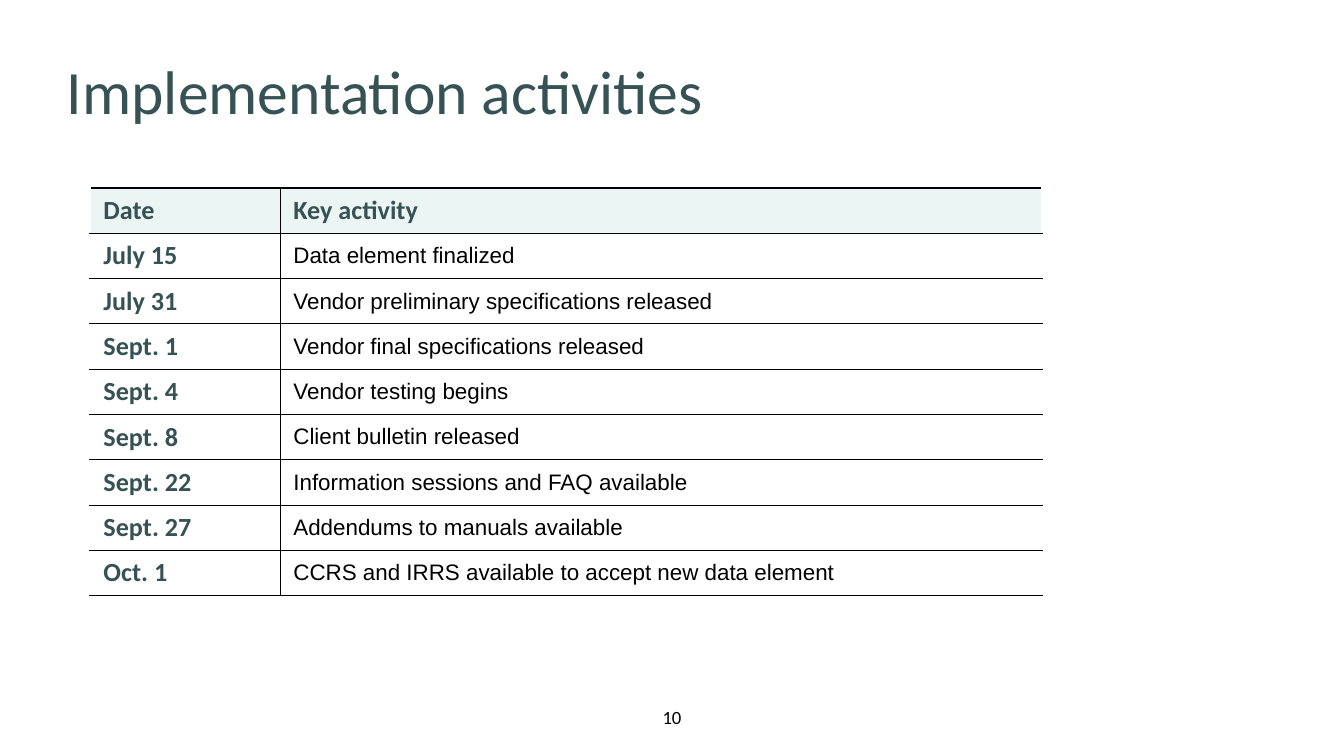
from lxml import etree
from pptx import Presentation
from pptx import util as u
from pptx.dml.color import RGBColor
from pptx.enum import text
from pptx.oxml import ns

SCALE = 914400 / 134.4
HEX = {"ink": "365254", "black": "000000", "white": "FFFFFF", "mint": "EBF5F3"}
ROWS = [
    ("Date", "Key activity"),
    ("July 15", "Data element finalized"),
    ("July 31", "Vendor preliminary specifications released"),
    ("Sept. 1", "Vendor final specifications released"),
    ("Sept. 4", "Vendor testing begins"),
    ("Sept. 8", "Client bulletin released"),
    ("Sept. 22", "Information sessions and FAQ available"),
    ("Sept. 27", "Addendums to manuals available"),
    ("Oct. 1", "CCRS and IRRS available to accept new data element"),
]


def px(n):
    return u.Emu(round(n * SCALE))


def place(shape, left, top, width, height):
    shape.left, shape.top = px(left), px(top)
    shape.width, shape.height = px(width), px(height)


def write(para, words, size, color, face="Calibri", bold=False):
    run = para.add_run()
    run.text = words
    run.font.name = face
    run.font.size = u.Pt(size)
    run.font.bold = bold
    run.font.color.rgb = RGBColor.from_string(HEX[color])


def trim(frame, anchor):
    frame.margin_left = frame.margin_right = 0
    frame.margin_top = frame.margin_bottom = 0
    frame.word_wrap = True
    frame.auto_size = text.MSO_AUTO_SIZE.NONE
    frame.vertical_anchor = anchor


def add_title(slide, words):
    title = slide.shapes.title
    place(title, 67, 65, 1210, 63)
    trim(title.text_frame, text.MSO_ANCHOR.TOP)
    para = title.text_frame.paragraphs[0]
    para.alignment = text.PP_ALIGN.LEFT
    para.line_spacing = u.Pt(33)
    write(para, words, 33, "ink")


def add_page(slide, words):
    box = slide.shapes.add_textbox(px(630), px(706), px(84), px(23))
    trim(box.text_frame, text.MSO_ANCHOR.MIDDLE)
    para = box.text_frame.paragraphs[0]
    para.alignment = text.PP_ALIGN.CENTER
    write(para, words, 10, "black")


def add_edge(cell, side, color, width):
    props = cell._tc.get_or_add_tcPr()
    line = etree.SubElement(props, ns.qn(f"a:ln{side}"), w=str(u.Pt(width)))
    fill = etree.SubElement(line, ns.qn("a:solidFill"))
    etree.SubElement(fill, ns.qn("a:srgbClr"), val=HEX[color])


def style(cell, row, col):
    outer, inner = ("white", 1), ("black", 0.5)
    edges = {
        "L": inner if col else outer,
        "R": outer if col else inner,
        "T": ("black", 0.5 if row else 1),
        "B": ("black", 1 if row == len(ROWS) - 1 else 0.5),
    }
    for side, edge in edges.items():
        add_edge(cell, side, *edge)
    if row:
        cell.fill.background()
    else:
        cell.fill.solid()
        cell.fill.fore_color.rgb = RGBColor.from_string(HEX["mint"])


def add_grid(slide):
    widths, high = (190, 762), 45
    frame = slide.shapes.add_table(
        len(ROWS), len(widths), px(90), px(188), px(sum(widths)), px(high * len(ROWS))
    )
    table = frame.table
    table.first_row = table.horz_banding = False
    for col, wide in enumerate(widths):
        table.columns[col].width = px(wide)
    for row, items in enumerate(ROWS):
        table.rows[row].height = px(high)
        for col, words in enumerate(items):
            cell = table.cell(row, col)
            style(cell, row, col)
            para = cell.text_frame.paragraphs[0]
            if row and col:
                cell.vertical_anchor = text.MSO_ANCHOR.MIDDLE
                write(para, words, 12, "black", "Arial")
            else:
                write(para, words, 14, "ink", bold=True)


def main():
    deck = Presentation()
    deck.slide_width, deck.slide_height = px(1344), px(756)
    slide = deck.slides.add_slide(deck.slide_layouts[5])
    add_page(slide, "10")
    add_title(slide, "Implementation activities")
    add_grid(slide)
    deck.save("out.pptx")


if __name__ == "__main__":
    main()
